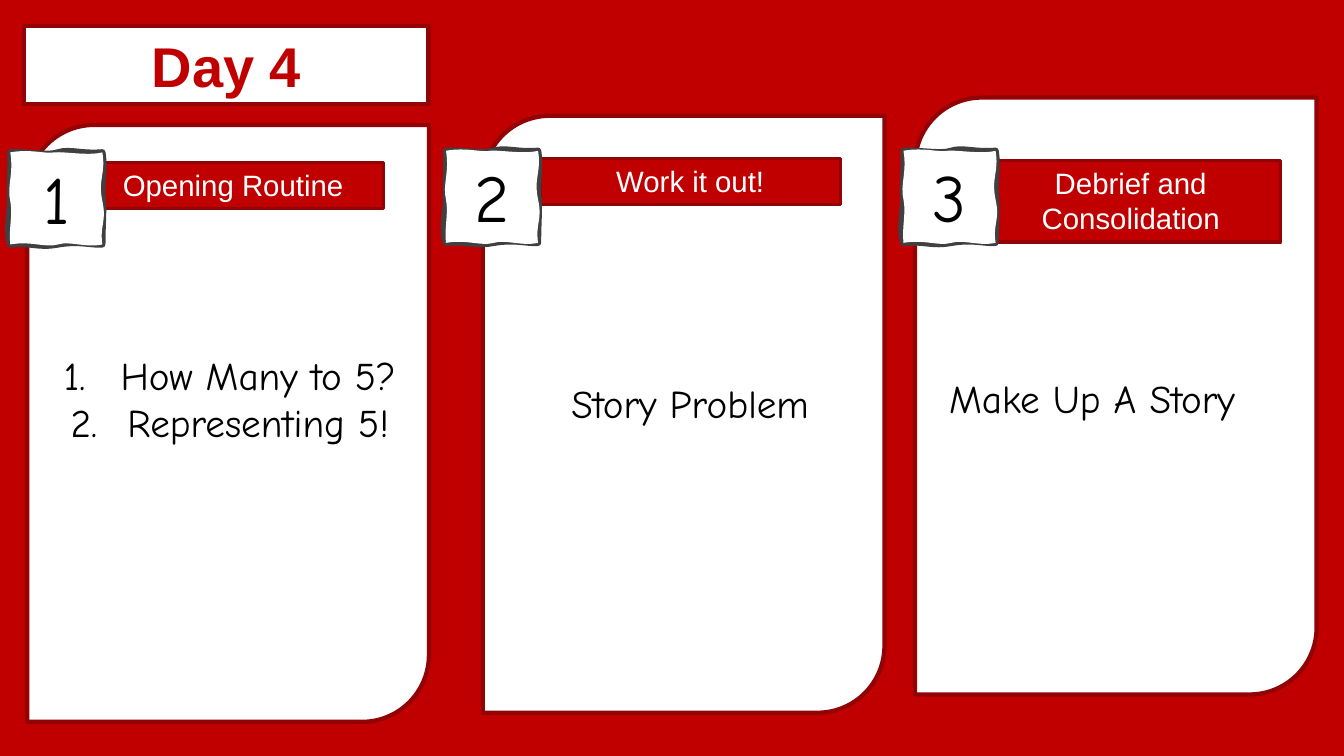
from dataclasses import dataclass

from lxml.etree import SubElement
from pptx import Presentation
from pptx.dml.color import RGBColor
from pptx.enum.shapes import MSO_SHAPE as Preset
from pptx.enum.text import MSO_ANCHOR as Anchor, MSO_AUTO_SIZE as AutoSize, PP_ALIGN as Align
from pptx.oxml.ns import qn
from pptx.util import Cm, Pt

RED, DARK_RED, WHITE, BLACK, GREY = "C00000", "920305", "FFFFFF", "000000", "404040"
SANS, HAND = "Arial", "Comic Neue"
CARD_WIDTH, CARD_HEIGHT = 10.12, 15.04
BANNER_WIDTH = 7.57
BADGE_SIDE = 2.32
LIST_INDENT = Cm(1.43)

# Cubic curves of the wobbly square, in percent of its side:
# two control points and an end point each, starting from (0, 0).
WOBBLY_EDGE = [
    ((15, -1), (41, 4), (52, 0)),
    ((64, -4), (78, 2), (100, 0)),
    ((103, 16), (99, 37), (100, 47)),
    ((102, 58), (100, 77), (100, 100)),
    ((88, 101), (75, 96), (52, 100)),
    ((30, 104), (25, 98), (0, 100)),
    ((-5, 87), (0, 63), (0, 52)),
    ((-1, 41), (1, 11), (0, 0)),
]
WOBBLY_PAPER = [
    ((22, -4), (38, 2), (48, 0)),
    ((59, -1), (85, 4), (100, 0)),
    ((104, 23), (95, 29), (100, 53)),
    ((105, 76), (97, 78), (100, 100)),
    ((82, 104), (65, 96), (52, 100)),
    ((38, 104), (23, 96), (0, 100)),
    ((-2, 84), (3, 68), (0, 53)),
    ((-4, 37), (4, 24), (0, 0)),
]


@dataclass(frozen=True)
class Box:
    """A rectangle in centimetres."""
    left: float
    top: float
    width: float
    height: float

    def lengths(self) -> tuple:
        return Cm(self.left), Cm(self.top), Cm(self.width), Cm(self.height)


@dataclass(frozen=True)
class Activity:
    heading: str
    tasks: list[str]
    card: tuple[float, float]
    banner: Box
    badge: tuple[float, float]
    task_box: Box


ACTIVITIES = [
    Activity("Opening Routine", ["How Many to 5?", "Representing 5!"], (0.69, 3.15),
             Box(2.09, 4.09, BANNER_WIDTH, 1.17), (0.26, 3.84), Box(1.04, 8.71, 9.5, 2.64)),
    Activity("Work it out!", ["Story Problem"], (12.17, 2.92),
             Box(13.61, 3.99, BANNER_WIDTH, 1.17), (11.24, 3.8), Box(13.34, 9.42, 8.1, 1.45)),
    Activity("Debrief and Consolidation", ["Make Up A Story"], (23.06, 2.46),
             Box(24.71, 4.04, BANNER_WIDTH, 2.06), (22.77, 3.8), Box(23.47, 9.3, 8.1, 1.45)),
]
DAY_BOX = Box(0.61, 0.66, 10.19, 1.96)


def paint(fill, color: str) -> None:
    fill.solid()
    fill.fore_color.rgb = RGBColor.from_string(color)


def style(shape, fill: str, line: str, weight: float) -> None:
    shape.shadow.inherit = False
    paint(shape.fill, fill)
    paint(shape.line.fill, line)
    shape.line.width = Pt(weight)


def write(shape, lines: list[str], *, size: float, font: str, color: str,
          bold: bool = False, numbered: bool = False, anchor: Anchor = Anchor.TOP,
          fit: AutoSize = AutoSize.SHAPE_TO_FIT_TEXT) -> None:
    frame = shape.text_frame
    frame.text = "\n".join(lines)
    frame.word_wrap = True
    frame.auto_size = fit
    frame.vertical_anchor = anchor
    for paragraph in frame.paragraphs:
        paragraph.alignment = Align.CENTER
        paragraph.space_before = Pt(0)
        paragraph.font.size = Pt(size)
        for run in paragraph.runs:
            run.font.size, run.font.name, run.font.bold = Pt(size), font, bold
            paint(run.font.fill, color)
        if numbered:
            properties = paragraph.font._element.getparent()
            properties.set("marL", str(LIST_INDENT))
            properties.set("indent", str(-LIST_INDENT))
            numbering = SubElement(properties, qn("a:buAutoNum"), type="arabicPeriod")
            properties.find(qn("a:defRPr")).addprevious(numbering)


def add_panel(slide, preset: Preset, box: Box, fill: str, weight: float):
    panel = slide.shapes.add_shape(preset, *box.lengths())
    style(panel, fill, DARK_RED, weight)
    return panel


def add_curves(path_list, curves: list, **paint_flags: str) -> None:
    """Append one closed path of cubic curves to a custom geometry."""
    outline = SubElement(path_list, qn("a:path"), w="100", h="100", **paint_flags)
    start = SubElement(outline, qn("a:moveTo"))
    SubElement(start, qn("a:pt"), x="0", y="0")
    for curve in curves:
        bend = SubElement(outline, qn("a:cubicBezTo"))
        for x, y in curve:
            SubElement(bend, qn("a:pt"), x=str(x), y=str(y))
    SubElement(outline, qn("a:close"))


def add_badge(slide, corner: tuple[float, float], number: int) -> None:
    left, top = (Cm(length) for length in corner)
    side = Cm(BADGE_SIDE)
    square = slide.shapes.build_freeform(left, top)
    square.add_line_segments([(left + side, top), (left + side, top + side),
                              (left, top + side)], close=True)
    badge = square.convert_to_shape()
    path_list = next(badge.element.iter(qn("a:pathLst")))
    for straight in list(path_list):
        path_list.remove(straight)
    add_curves(path_list, WOBBLY_EDGE, fill="none")
    add_curves(path_list, WOBBLY_PAPER, stroke="0")
    style(badge, WHITE, GREY, 4.5)
    write(badge, [str(number)], size=48, font=HAND, color=BLACK)


def bring_to_front(slide, placeholder, box: Box) -> None:
    placeholder.left, placeholder.top, placeholder.width, placeholder.height = box.lengths()
    slide.shapes.element.append(placeholder.element)


def show_day(slide, day) -> None:
    bring_to_front(slide, day, DAY_BOX)
    properties = day.element.find(qn("p:spPr"))
    geometry = SubElement(properties, qn("a:prstGeom"), prst="round2DiagRect")
    SubElement(geometry, qn("a:avLst"))
    style(day, WHITE, DARK_RED, 3)
    write(day, ["Day 4"], size=40, font=SANS, color=RED, bold=True,
          anchor=Anchor.MIDDLE, fit=AutoSize.NONE)


def main() -> None:
    deck = Presentation()
    deck.slide_width, deck.slide_height = Cm(33.87), Cm(19.05)
    slide = deck.slides.add_slide(deck.slide_layouts[1])
    paint(slide.background.fill, RED)
    day, routine = slide.placeholders

    for activity in ACTIVITIES:
        card = Box(*activity.card, CARD_WIDTH, CARD_HEIGHT)
        add_panel(slide, Preset.ROUND_2_DIAG_RECTANGLE, card, WHITE, 3)
    for activity in reversed(ACTIVITIES):
        banner = add_panel(slide, Preset.RECTANGLE, activity.banner, RED, 2.25)
        write(banner, [activity.heading], size=21, font=SANS, color=WHITE)
    show_day(slide, day)
    for number, activity in enumerate(ACTIVITIES, start=1):
        add_badge(slide, activity.badge, number)
    for activity in ACTIVITIES:
        is_list = len(activity.tasks) > 1
        if is_list:
            tasks = routine
            bring_to_front(slide, tasks, activity.task_box)
        else:
            tasks = slide.shapes.add_textbox(*activity.task_box.lengths())
        write(tasks, activity.tasks, size=28, font=HAND, color=BLACK,
              numbered=is_list, anchor=Anchor.MIDDLE)

    deck.save("out.pptx")


if __name__ == "__main__":
    main()
